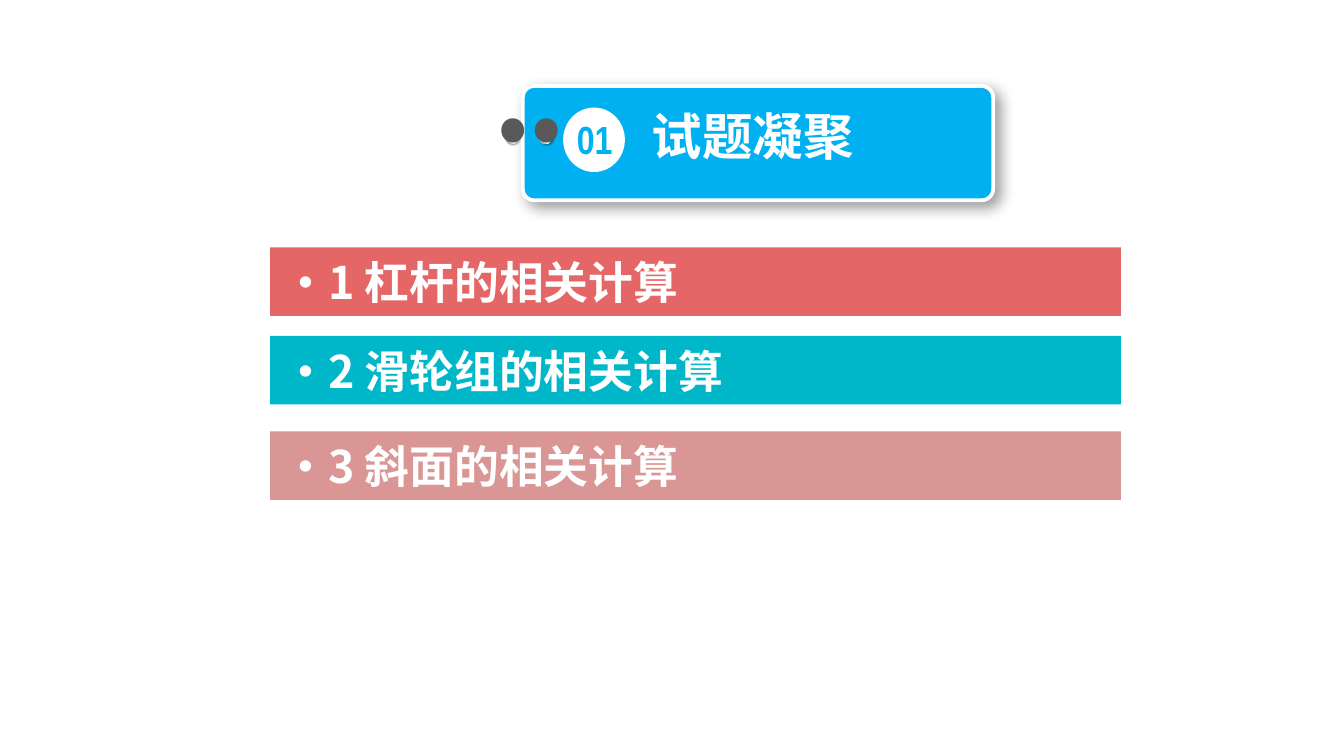
"""Build a section slide with a numbered heading panel and three topic bars."""
from lxml import etree
from pptx import Presentation
from pptx import util as u
from pptx.dml.color import RGBColor
from pptx.enum import shapes, text
from pptx.oxml import parse_xml
from pptx.oxml.ns import qn

WHITE = RGBColor(0xFF, 0xFF, 0xFF)
BLUE = RGBColor(0x00, 0xB0, 0xF0)
GREY = RGBColor(0x59, 0x59, 0x59)
RED = RGBColor(0xE5, 0x66, 0x66)
TEAL = RGBColor(0x00, 0xB7, 0xCA)
PINK = RGBColor(0xD9, 0x96, 0x94)
CHINESE_FONT = "Noto Sans CJK SC"
NAMESPACE = 'xmlns:a="http://schemas.openxmlformats.org/drawingml/2006/main"'
METAL_STOPS = [(0, "FFFFFF"), (17, "A6A6A6"), (35, "F2F2F2"),
               (55, "A6A6A6"), (75, "F2F2F2"), (100, "A6A6A6")]


def add_filled(kind, left, top, width, height, color, shadow=None):
    shape = slide.shapes.add_shape(
        kind, u.Inches(left), u.Inches(top), u.Inches(width), u.Inches(height))
    shape.fill.solid()
    shape.fill.fore_color.rgb = color
    shape.line.fill.background()
    shape.shadow.inherit = False
    if shadow:
        blur, distance = shadow
        effects = shape._element.spPr.find(qn("a:effectLst"))
        effects.append(parse_xml(
            f'<a:outerShdw {NAMESPACE} blurRad="{u.Pt(blur)}" dist="{u.Pt(distance)}" '
            'dir="2700000" algn="tl" rotWithShape="0"><a:srgbClr val="000000">'
            '<a:alpha val="40000"/></a:srgbClr></a:outerShdw>'))
    return shape


def write_text(shape, words, size, font, color, alignment):
    frame = shape.text_frame
    frame.text = words
    frame.word_wrap = True
    frame.vertical_anchor = text.MSO_ANCHOR.MIDDLE
    paragraph = frame.paragraphs[0]
    paragraph.alignment = alignment
    paragraph.font.size = u.Pt(size)
    paragraph.font.bold = True
    paragraph.font.color.rgb = color
    paragraph.font.name = font
    properties = paragraph._p.pPr.find(qn("a:defRPr"))
    etree.SubElement(properties, qn("a:ea")).set("typeface", font)


presentation = Presentation()
presentation.slide_width = u.Inches(10)
presentation.slide_height = u.Inches(10) * 9 // 16
slide = presentation.slides.add_slide(presentation.slide_layouts[5])
OVAL = shapes.MSO_SHAPE.OVAL

panel = add_filled(shapes.MSO_SHAPE.ROUNDED_RECTANGLE, 3.89, 0.64, 3.5, 0.85, BLUE, (8, 4))
panel.adjustments[0] = 0.1
panel.line.color.rgb = WHITE
panel.line.width = u.Pt(2)

stops = "".join(f'<a:gs pos="{position * 1000}"><a:srgbClr val="{color}"/></a:gs>'
                for position, color in METAL_STOPS)
for left in (3.98, 3.73):
    pin = add_filled(OVAL, left + 0.03, 0.97, 0.1, 0.1, GREY, (1, 1))
    pin.rotation = 270
    solid = pin._element.spPr.find(qn("a:solidFill"))
    solid.addprevious(parse_xml(
        f'<a:gradFill {NAMESPACE}><a:gsLst>{stops}</a:gsLst>'
        '<a:lin ang="2700000" scaled="0"/></a:gradFill>'))
    pin._element.spPr.remove(solid)
    add_filled(OVAL, left, 0.88, 0.17, 0.18, GREY)

add_filled(OVAL, 4.19, 0.8, 0.46, 0.48, WHITE)
number = slide.shapes.add_textbox(
    u.Inches(4.16), u.Inches(0.81), u.Inches(0.53), u.Inches(0.45))
write_text(number, "01", 21, "Arial Narrow", BLUE, text.PP_ALIGN.CENTER)

title = slide.shapes.title
title.left, title.top = u.Inches(4.49), u.Inches(0.73)
title.width, title.height = u.Inches(2.22), u.Inches(0.56)
write_text(title, "试题凝聚", 27, CHINESE_FONT, WHITE, text.PP_ALIGN.CENTER)
slide.shapes._spTree.append(title._element)

topics = [
    (1.84, RED, "·1 杠杆的相关计算"),
    (2.5, TEAL, "·2 滑轮组的相关计算"),
    (3.21, PINK, "·3 斜面的相关计算"),
]
for top, color, words in topics:
    bar = add_filled(shapes.MSO_SHAPE.RECTANGLE, 2.01, top, 6.33, 0.51, color)
    write_text(bar, words, 24, CHINESE_FONT, WHITE, text.PP_ALIGN.LEFT)

presentation.save("out.pptx")
